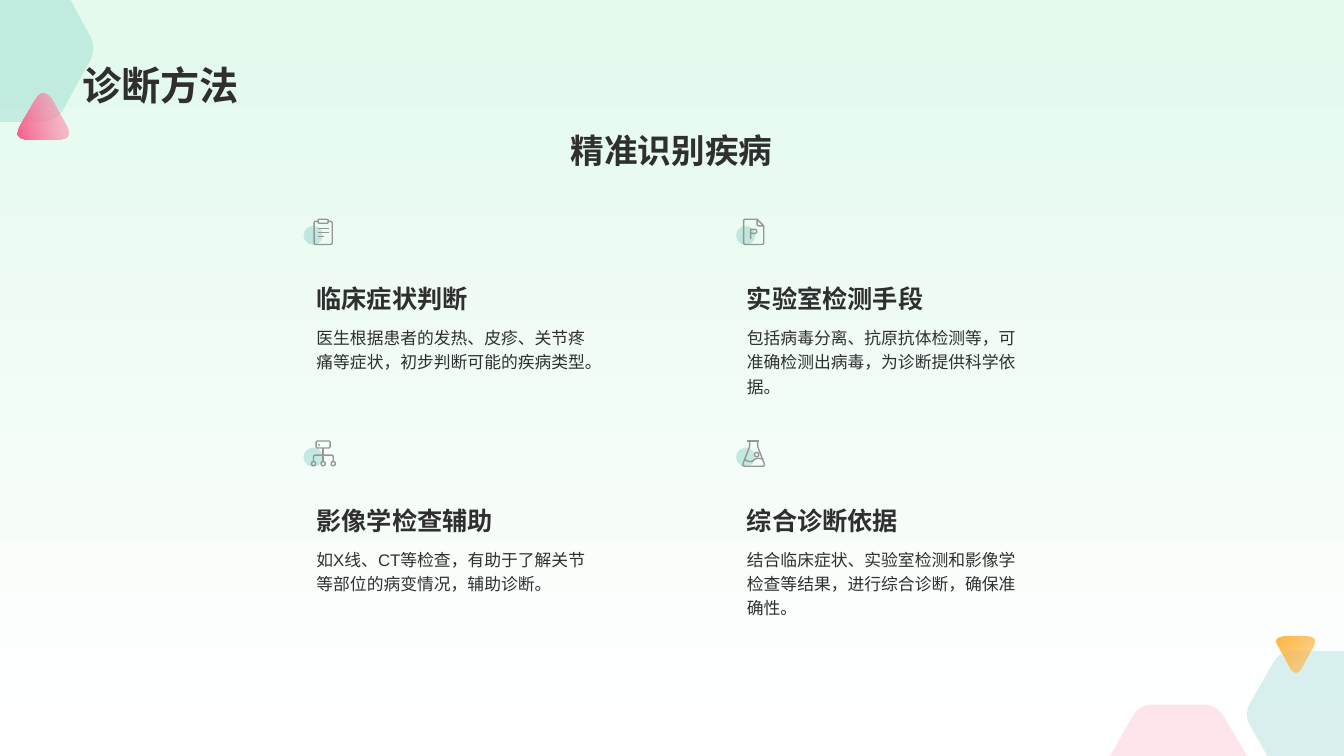
from itertools import product
from math import hypot

from lxml.etree import SubElement
from pptx import Presentation
from pptx.dml.color import RGBColor
from pptx.enum.shapes import MSO_SHAPE as SHAPE
from pptx.enum.text import MSO_ANCHOR as ANCHOR, PP_ALIGN as ALIGN
from pptx.oxml.ns import qn
from pptx.util import Inches, Pt

UNIT = Inches(0.01)
COLS, ROWS = 1333, 750
COLORS = {"ink": "2F2F2F", "icon": "979797", "teal": "009A8C", "pink": "FA5785",
          "rose": "FC9AB6", "amber": "FFB644", "mint": "E3FAED", "white": "FFFFFF"}

CLIPBOARD = {
    "closed": [[(14.5, 0.5, 1.5), (24.5, 0.5, 1.5), (24.5, 4.5, 1.5), (14.5, 4.5, 1.5)]],
    "open": [[(14.5, 2.5), (10.5, 2.5, 2), (10.5, 25.5, 2), (28.5, 25.5, 2),
              (28.5, 2.5, 2), (24.5, 2.5)],
             [(14.5, 9.5), (25.5, 9.5)], [(14.5, 13.5), (25.5, 13.5)],
             [(14.5, 17.5), (20.5, 17.5)]],
    "rings": []}
REPORT = {
    "closed": [[(7.5, 0.5, 2), (21, 0.5), (27.5, 7), (27.5, 25.5, 2), (7.5, 25.5, 2)]],
    "open": [[(21, 0.5), (21, 7, 1.5), (27.5, 7)],
             [(14.5, 20), (14.5, 10.5), (20.5, 10.5, 2), (20.5, 14.5, 2), (14.5, 14.5)]],
    "rings": []}
NETWORK = {
    "closed": [[(12.5, 0.5, 2), (26.5, 0.5, 2), (26.5, 7.5, 2), (12.5, 7.5, 2)]],
    "open": [[(19.5, 7.5), (19.5, 21)],
             [(10, 21), (10, 14.5, 2), (29.5, 14.5, 2), (29.5, 21)]],
    "rings": [(10, 23, 4), (19.5, 23, 4), (29.5, 23, 4), (15.5, 4.5, 0.5)]}
FLASK = {
    "closed": [],
    "open": [[(11, 0.5), (23, 0.5)],
             [(13.5, 0.5), (13.5, 6, 1), (6, 25.5, 3), (29, 25.5, 3), (21.5, 6, 1), (21.5, 0.5)],
             [(8, 18.5), (15, 22, 4), (20, 17, 4), (27, 18.5)]],
    "rings": [(20.5, 14, 4)]}

METHODS = [
    (CLIPBOARD, "临床症状判断", "医生根据患者的发热、皮疹、关节疼痛等症状，初步判断可能的疾病类型。"),
    (REPORT, "实验室检测手段", "包括病毒分离、抗原抗体检测等，可准确检测出病毒，为诊断提供科学依据。"),
    (NETWORK, "影像学检查辅助", "如X线、CT等检查，有助于了解关节等部位的病变情况，辅助诊断。"),
    (FLASK, "综合诊断依据", "结合临床症状、实验室检测和影像学检查等结果，进行综合诊断，确保准确性。")]


def rgb(name):
    """Return the named colour."""
    return RGBColor.from_string(COLORS[name])


def units(*values):
    """Turn grid units into slide lengths."""
    return [round(v * UNIT) for v in values]


def set_gradient(fill, angle, start, end):
    """Fill with two named colours along a counter-clockwise angle."""
    fill.gradient()
    fill.gradient_angle = angle
    for stop, name, position in zip(fill.gradient_stops, (start, end), (0, 1)):
        stop.color.rgb = rgb(name)
        stop.position = position


def set_alpha(sp, *percents):
    """Set the opacity of each fill colour of a shape in turn."""
    for color, percent in zip(sp._element.spPr.iter(qn("a:srgbClr")), percents):
        SubElement(color, qn("a:alpha")).set("val", str(percent * 1000))


def tint(sp, color, percent):
    """Give a shape a translucent fill and no line."""
    sp.shadow.inherit = False
    sp.fill.solid()
    sp.fill.fore_color.rgb = rgb(color)
    set_alpha(sp, percent)
    sp.line.fill.background()


def toward(a, b, dist):
    """Return the point at a distance from a on the way to b."""
    share = dist / hypot(b[0] - a[0], b[1] - a[1])
    return a[0] + (b[0] - a[0]) * share, a[1] + (b[1] - a[1]) * share


def rounded(points, steps=12):
    """Round each corner that carries a third number, the cut length."""
    result = []
    for i, (x, y, *cut) in enumerate(points):
        if not cut:
            result.append((x, y))
            continue
        a = toward((x, y), points[i - 1], cut[0])
        b = toward((x, y), points[(i + 1) % len(points)], cut[0])
        for t in (n / steps for n in range(steps + 1)):
            result.append(tuple((1 - t) ** 2 * p + 2 * t * (1 - t) * c + t * t * q
                                for p, c, q in zip(a, (x, y), b)))
    return result


def ring(cx, cy, size):
    """Return a square around a centre, rounded until it is a circle."""
    h = size / 2
    return [(cx + dx * h, cy + dy * h, h) for dx, dy in ((-1, -1), (1, -1), (1, 1), (-1, 1))]


def add_outline(s, x, y, closed, opened=()):
    """Draw closed and open contours as one shape from the box corner x, y."""
    builder = None
    for points in [*closed, *opened]:
        start, *rest = [units(x + px, y + py) for px, py in rounded(points)]
        if builder is None:
            builder = s.shapes.build_freeform(*start, scale=1.0)
        else:
            builder.move_to(*start)
        builder.add_line_segments(rest, close=points in closed)
    sp = builder.convert_to_shape()
    sp.shadow.inherit = False
    return sp


def add_text(s, text, box, size=12, bold=False, align=ALIGN.LEFT, anchor=ANCHOR.TOP, spacing=1.0):
    """Place one formatted paragraph in a box."""
    tf = s.shapes.add_textbox(*units(*box)).text_frame
    tf.word_wrap = True
    tf.vertical_anchor = anchor
    p = tf.paragraphs[0]
    p.alignment, p.line_spacing = align, spacing
    r = p.add_run()
    r.text = text
    r.font.name, r.font.size, r.font.bold = "Arial", Pt(size), bold
    r.font.color.rgb = rgb("ink")


def add_corners(s):
    """Draw the background and the tinted shapes in two corners."""
    set_gradient(s.background.fill, 270, "mint", "white")
    for x, y, points, color in [
            (0, 0, [(0, 0), (70, 0), (96, 48, 15), (56, 121, 15), (0, 121)], "teal"),
            (COLS - 96, ROWS - 104,
             [(96, 0), (96, 104), (20, 104), (-3.5, 62.5, 13), (32.5, 0, 13)], "teal"),
            (COLS - 232, ROWS - 51, [(0, 51), (29, 0, 14), (106, 0, 14), (136, 51)], "pink")]:
        tint(add_outline(s, x, y, [points]), color, 15)
    for x, y, points, angle, stops, alphas in [
            (COLS - 68, ROWS - 118, [(-3.5, 0, 12), (43, 0, 12), (20, 40, 12)],
             135, ("amber", "amber"), (50, 100)),
            (17, 89, [(26, -5, 18), (57, 49, 18), (-6, 49, 18)],
             195, ("rose", "pink"), (50, 96))]:
        sp = add_outline(s, x, y, [points])
        set_gradient(sp.fill, angle, *stops)
        set_alpha(sp, *alphas)
        sp.line.fill.background()


def add_icon(s, x, y, icon):
    """Draw a line icon over a tinted dot in the box at x, y."""
    tint(s.shapes.add_shape(SHAPE.OVAL, *units(x, y + 7, 19, 19)), "teal", 20)
    circles = [ring(*circle) for circle in icon["rings"]]
    sp = add_outline(s, x, y, icon["closed"] + circles, icon["open"])
    sp.fill.background()
    sp.line.color.rgb = rgb("icon")
    sp.line.width = Pt(1)


def add_method(s, x, y, heading, body):
    """Place the heading and text of a method in the box at x, y."""
    add_text(s, heading, (x, y, 300, 47), size=18, bold=True, anchor=ANCHOR.BOTTOM)
    add_text(s, body, (x, y + 47.5, 300, 101), spacing=1.2)


def main():
    """Build the slide and save it."""
    prs = Presentation()
    prs.slide_width, prs.slide_height = units(COLS, ROWS)
    s = prs.slides.add_slide(prs.slide_layouts[6])
    add_corners(s)
    add_text(s, "诊断方法", (72, 14, 1188, 98), size=28, bold=True, anchor=ANCHOR.BOTTOM)
    add_text(s, "精准识别疾病", (72, 124, 1188, 50), size=24, bold=True, align=ALIGN.CENTER)
    for (row, col), (icon, heading, body) in zip(product(range(2), repeat=2), METHODS):
        add_icon(s, 301 + 429 * col, 217 + 220 * row, icon)
        add_method(s, 304 + 427 * col, 269 + 220 * row, heading, body)
    prs.save("out.pptx")


if __name__ == "__main__":
    main()
